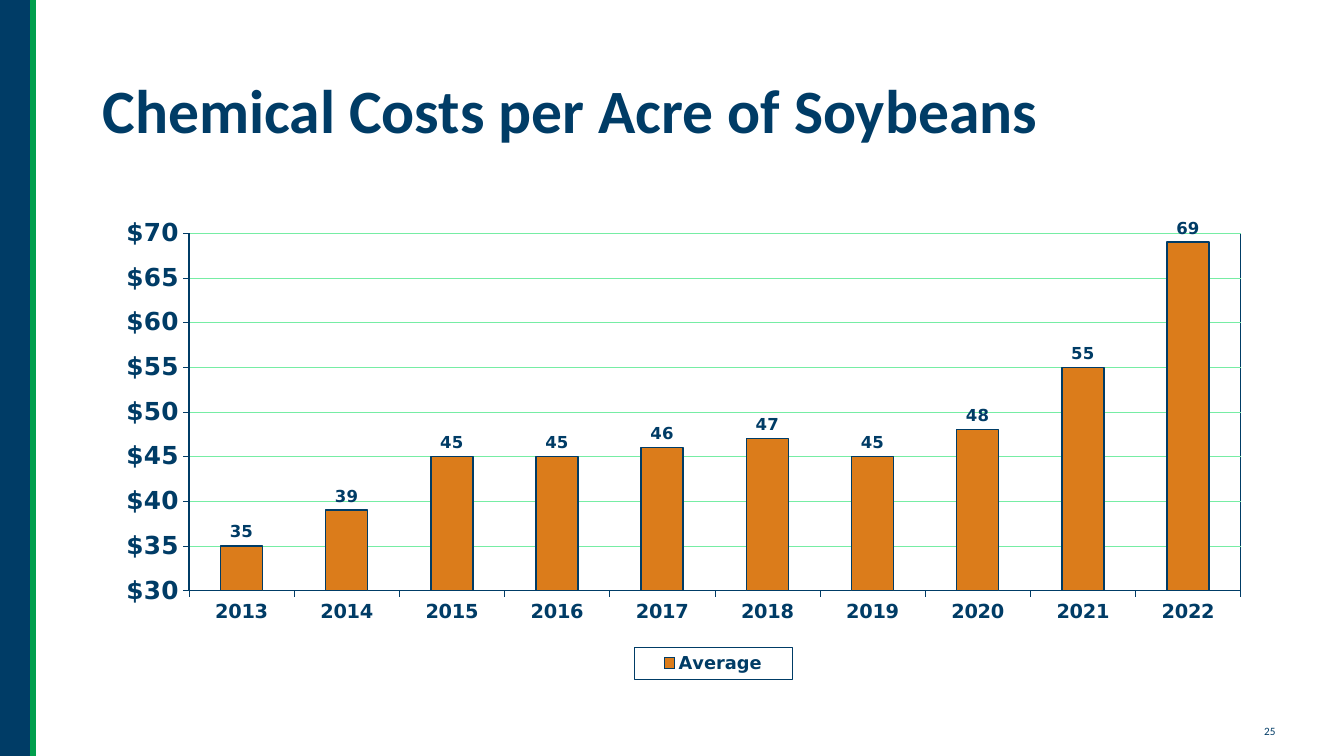
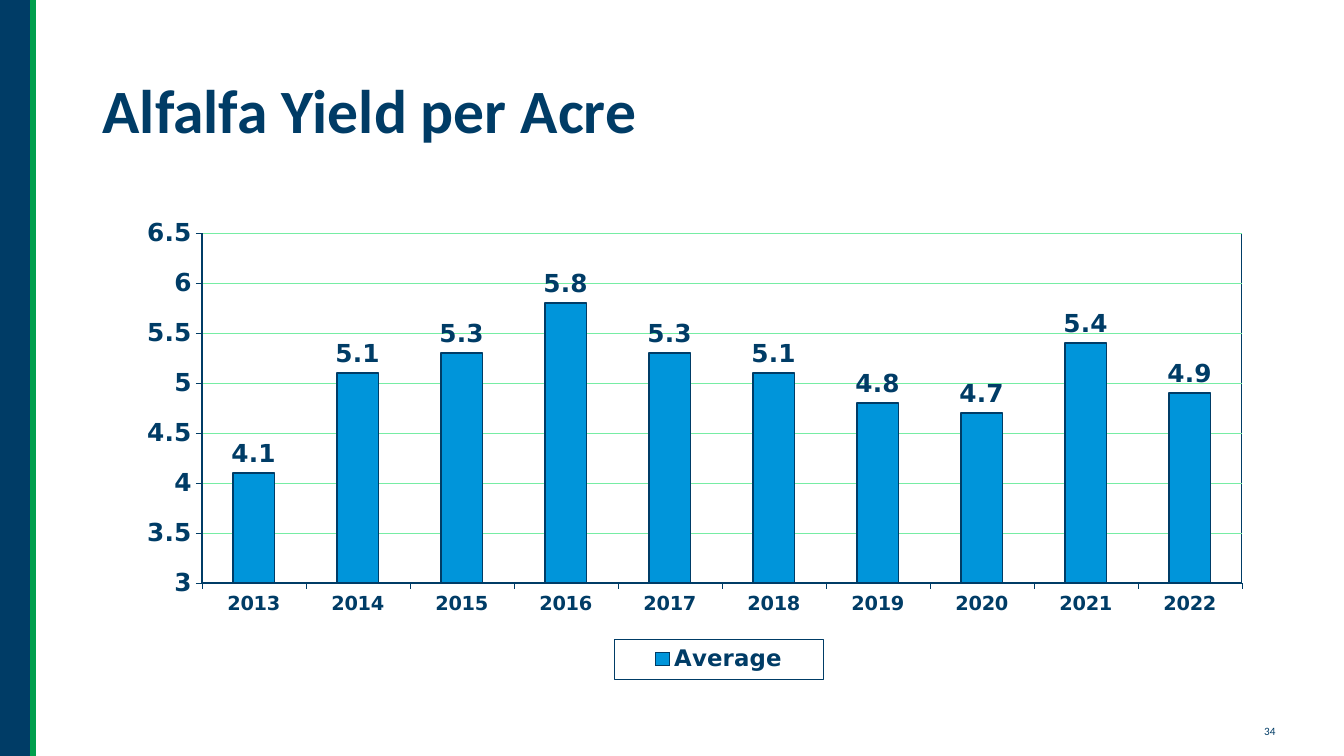
from lxml.etree import SubElement
from pptx import Presentation
from pptx.chart.data import CategoryChartData
from pptx.dml.color import RGBColor
from pptx.enum.chart import XL_CHART_TYPE, XL_LABEL_POSITION, XL_LEGEND_POSITION, XL_TICK_MARK
from pptx.enum.shapes import MSO_CONNECTOR, MSO_SHAPE
from pptx.enum.text import MSO_ANCHOR
from pptx.oxml import parse_xml
from pptx.oxml.ns import nsdecls, qn
from pptx.util import Inches, Pt

NAVY = RGBColor(0x00, 0x3C, 0x66)
GREEN = RGBColor(0x00, 0x9F, 0x4D)
MINT = RGBColor(0x76, 0xED, 0xA4)
ORANGE = RGBColor(0xDB, 0x7C, 0x1B)
BLUE = RGBColor(0x00, 0x95, 0xDA)

TEXT_FONT = "Calibri"
CHART_FONT = "DejaVu Sans"
AXIS_SIZE = 17.7
YEAR_SIZE = 13.8
YEARS = [str(year) for year in range(2013, 2023)]


def style_font(font, size, name=CHART_FONT, bold=True):
    font.name = name
    font.size = Pt(size)
    font.bold = bold
    font.color.rgb = NAVY


def style_line(line, color, width):
    line.color.rgb = color
    line.width = Pt(width)


def add_text(slide, text, left, top, width, height, size, bold, wrap):
    box = slide.shapes.add_textbox(Inches(left), Inches(top), Inches(width), Inches(height))
    frame = box.text_frame
    frame.word_wrap = wrap
    frame.vertical_anchor = MSO_ANCHOR.MIDDLE
    frame.text = text
    paragraph = frame.paragraphs[0]
    paragraph.line_spacing = 0.9 if bold else 1.0
    style_font(paragraph.runs[0].font, size, TEXT_FONT, bold)


def add_side_band(slide):
    band = slide.shapes.add_shape(MSO_SHAPE.RECTANGLE, 0, 0, Inches(0.33), Inches(7.5))
    band.shadow.inherit = False
    band.fill.solid()
    band.fill.fore_color.rgb = NAVY
    band.line.fill.background()
    edge = slide.shapes.add_connector(
        MSO_CONNECTOR.STRAIGHT, Inches(0.33), 0, Inches(0.33), Inches(7.5)
    )
    style_line(edge.line, GREEN, 4.5)
    SubElement(edge.element.spPr, qn("a:effectLst"))


def manual_layout(bounds, inner=False):
    target = '<c:layoutTarget val="inner"/>' if inner else ""
    modes = '<c:xMode val="edge"/><c:yMode val="edge"/>'
    values = "".join(f'<c:{key} val="{value}"/>' for key, value in zip("xywh", bounds))
    return parse_xml(
        f'<c:layout {nsdecls("c")}><c:manualLayout>{target}{modes}{values}'
        "</c:manualLayout></c:layout>"
    )


def border_properties(width):
    return parse_xml(
        f'<c:spPr {nsdecls("c", "a")}><a:noFill/><a:ln w="{Pt(width)}"><a:solidFill>'
        f'<a:srgbClr val="{NAVY}"/></a:solidFill></a:ln></c:spPr>'
    )


def remove_layout(element):
    for layout in element.findall(qn("c:layout")):
        element.remove(layout)


def frame_plot_area(chart, bounds):
    plot_area = chart.element.find(qn("c:chart")).find(qn("c:plotArea"))
    remove_layout(plot_area)
    plot_area.insert(0, manual_layout(bounds, inner=True))
    plot_area.append(border_properties(1))


def add_legend(chart, size, bounds):
    chart.has_legend = True
    legend = chart.legend
    legend.position = XL_LEGEND_POSITION.BOTTOM
    legend.include_in_layout = False
    style_font(legend.font, size)
    element = chart.element.find(qn("c:chart")).find(qn("c:legend"))
    remove_layout(element)
    element.find(qn("c:legendPos")).addnext(manual_layout(bounds))
    element.find(qn("c:txPr")).addprevious(border_properties(0.25))


def style_axis(axis, size):
    axis.major_tick_mark = XL_TICK_MARK.OUTSIDE
    axis.minor_tick_mark = XL_TICK_MARK.NONE
    style_font(axis.tick_labels.font, size)
    style_line(axis.format.line, NAVY, 0.25)


def style_value_axis(axis, minimum, maximum, step, number_format):
    style_axis(axis, AXIS_SIZE)
    axis.minimum_scale = minimum
    axis.maximum_scale = maximum
    axis.major_unit = step
    axis.tick_labels.number_format = number_format
    axis.tick_labels.number_format_is_linked = False
    axis.has_major_gridlines = True
    style_line(axis.major_gridlines.format.line, MINT, 0.25)


def style_columns(plot, color, label_size):
    plot.gap_width = 150
    plot.vary_by_categories = False
    series = plot.series[0]
    series.format.fill.solid()
    series.format.fill.fore_color.rgb = color
    style_line(series.format.line, NAVY, 1)
    labels = series.data_labels
    labels.show_value = True
    labels.position = XL_LABEL_POSITION.OUTSIDE_END
    style_font(labels.font, label_size)


def add_column_chart(slide, values, color, scale, number_format, label_size,
                     legend_size, plot_bounds, legend_bounds):
    data = CategoryChartData()
    data.categories = YEARS
    data.add_series("Average", values)
    chart = slide.shapes.add_chart(
        XL_CHART_TYPE.COLUMN_CLUSTERED,
        Inches(0.92), Inches(2), Inches(11.5), Inches(4.76), data,
    ).chart
    chart.has_title = False
    style_font(chart.font, AXIS_SIZE)
    style_axis(chart.category_axis, YEAR_SIZE)
    style_value_axis(chart.value_axis, *scale, number_format)
    style_columns(chart.plots[0], color, label_size)
    frame_plot_area(chart, plot_bounds)
    add_legend(chart, legend_size, legend_bounds)


def add_chart_slide(presentation, title, number, **chart_options):
    slide = presentation.slides.add_slide(presentation.slide_layouts[6])
    add_text(slide, number, 12.44, 7.13, 0.34, 0.24, 8, False, False)
    add_side_band(slide)
    add_text(slide, title, 0.92, 0.4, 11.5, 1.45, 44, True, True)
    add_column_chart(slide, **chart_options)


def main():
    presentation = Presentation()
    presentation.slide_width = Inches(13.33)
    presentation.slide_height = Inches(7.5)
    add_chart_slide(
        presentation, "Chemical Costs per Acre of Soybeans", "25",
        values=[35, 39, 45, 45, 46, 47, 45, 48, 55, 69],
        color=ORANGE, scale=(30, 70, 5), number_format='"$"#,##0',
        label_size=11.8, legend_size=12.7,
        plot_bounds=(0.083, 0.066, 0.907, 0.745),
        legend_bounds=(0.467, 0.929, 0.136, 0.066),
    )
    add_chart_slide(
        presentation, "Alfalfa Yield per Acre", "34",
        values=[4.1, 5.1, 5.3, 5.8, 5.3, 5.1, 4.8, 4.7, 5.4, 4.9],
        color=BLUE, scale=(3, 6.5, 0.5), number_format="General",
        label_size=17.7, legend_size=16.3,
        plot_bounds=(0.094, 0.066, 0.897, 0.729),
        legend_bounds=(0.45, 0.912, 0.18, 0.083),
    )
    presentation.save("out.pptx")


if __name__ == "__main__":
    main()
